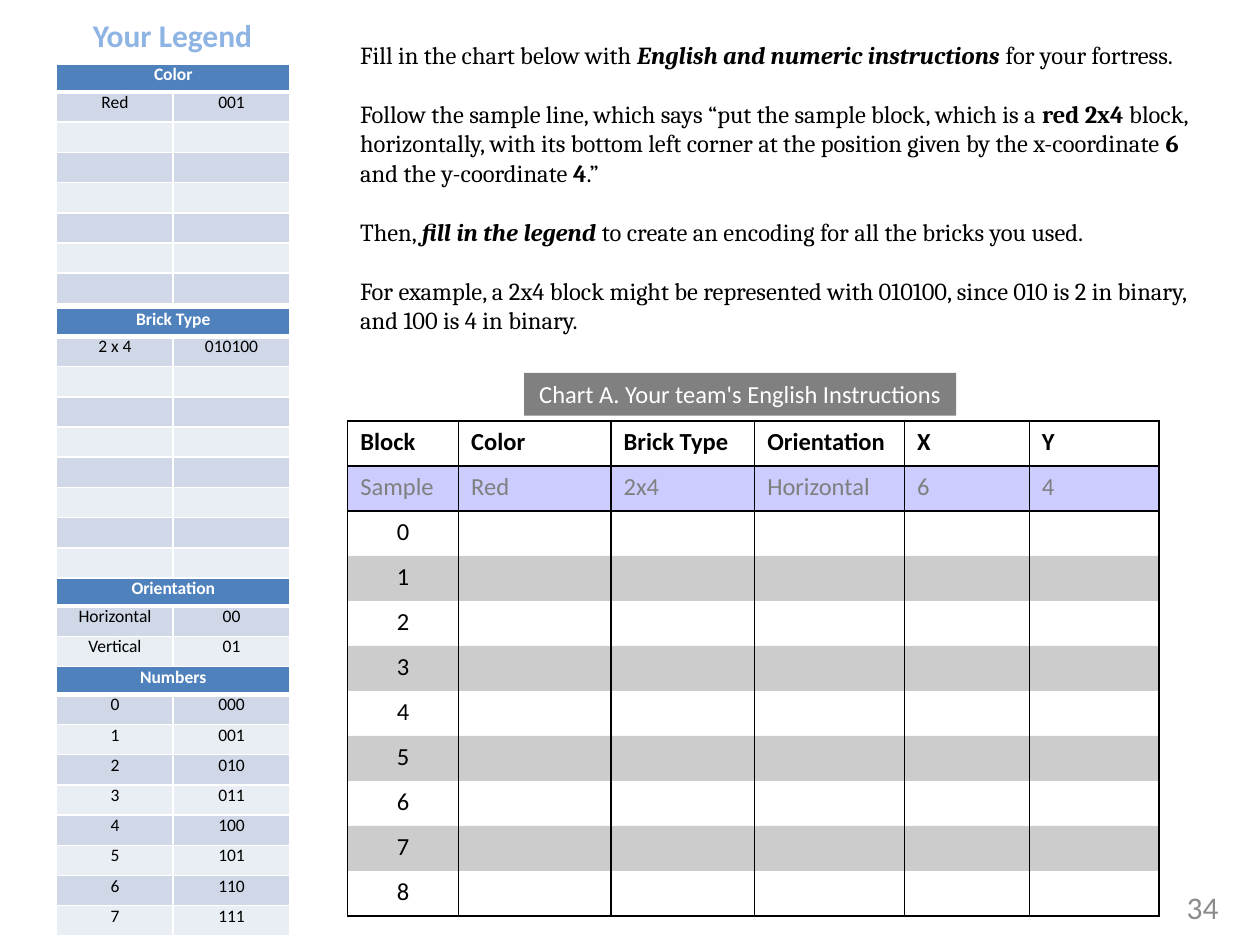
"""Build the legend and instruction chart worksheet slide."""
from lxml import etree
from pptx import Presentation
from pptx.dml.color import RGBColor
from pptx.enum.shapes import MSO_SHAPE
from pptx.enum.text import MSO_ANCHOR, PP_ALIGN
from pptx.oxml.ns import qn
from pptx.util import Inches, Pt

LEFT, CENTER, RIGHT = PP_ALIGN.LEFT, PP_ALIGN.CENTER, PP_ALIGN.RIGHT
TOP, MIDDLE = MSO_ANCHOR.TOP, MSO_ANCHOR.MIDDLE
RECTANGLE = MSO_SHAPE.RECTANGLE
NO_GRID_STYLE = "{2D5ABB26-0587-4C30-8999-92F81FD0307C}"

COLORS = {
    "black": "000000", "white": "FFFFFF", "blue": "0000FF", "muted": "7F7F7F",
    "label": "808080", "number": "8C8C8C", "title": "8EB4E3",
    "head": "4F81BD", "odd": "D0D8E8", "even": "E9EDF4",
}
BLANK_ROW = ("", "")
LEGEND = [
    ("Color", [("Red", "001")] + [BLANK_ROW] * 6, 0.04),
    ("Brick Type", [("2 x 4", "010100")] + [BLANK_ROW] * 7, 0),
    ("Orientation", [("Horizontal", "00"), ("Vertical", "01")], 0),
    ("Numbers", [(str(n), f"{n:03b}") for n in range(8)], 0),
]
LEGEND_LEFT, LEGEND_TOP, LEGEND_WIDTH = 0.45, 0.51, 1.85
LEGEND_HEAD, LEGEND_ROW = 0.22, 0.24

CHART = [
    ("Block", "Color", "Brick Type", "Orientation", "X", "Y"),
    ("Sample", "Red", "2x4", "Horizontal", "6", "4"),
] + [(str(n), "", "", "", "", "") for n in range(9)]
CHART_LEFT, CHART_TOP, CHART_HEIGHT = 2.76, 3.34, 3.93
CHART_COLUMNS = [0.88, 1.21, 1.14, 1.19, 0.99, 1.03]

INSTRUCTIONS = [
    [("Fill in the chart below with ", ""),
     ("English and numeric instructions ", "bi"), ("for your fortress.", "")],
    [("Follow the sample line, which says “put the sample block, which is a ", ""),
     ("red 2x4", "b"),
     (" block, horizontally, with its bottom left corner at the position given"
      " by the x-coordinate ", ""),
     ("6", "b"), (" and the y-coordinate ", ""), ("4", "b"), (".”", "")],
    [("Then, ", ""), ("fill in the legend ", "bi"),
     ("to create an encoding for all the bricks you used.", "")],
    [("For example, a 2x4 block might be represented with 010100, since 010 is 2"
      " in binary, and 100 is 4 in binary.", "")],
]


def rgb(name):
    return RGBColor.from_string(COLORS[name])


def set_font(paragraph, size, color, bold=None, align=LEFT, face="Calibri"):
    paragraph.alignment = align
    font = paragraph.font
    font.name, font.size, font.bold = face, Pt(size), bold
    font.color.rgb = rgb(color)


def write_frame(shape, text, size, color, bold=None, align=CENTER, anchor=TOP, wrap=False):
    frame = shape.text_frame
    frame.word_wrap, frame.vertical_anchor = wrap, anchor
    frame.text = text
    set_font(frame.paragraphs[0], size, color, bold, align)


def write_cell(cell, text, size, color, bold, align):
    cell.text = text
    paragraph = cell.text_frame.paragraphs[0]
    set_font(paragraph, size, color, bold, align)
    if not text:
        etree.SubElement(paragraph._p, qn("a:endParaRPr"), sz=str(size * 100))


def fill_cell(cell, color, opacity=100):
    cell.fill.solid()
    cell.fill.fore_color.rgb = rgb(color)
    if opacity < 100:
        tint = cell._tc.tcPr.find(".//" + qn("a:srgbClr"))
        etree.SubElement(tint, qn("a:alpha"), val=str(opacity * 1000))


def border_cell(cell, color, widths):
    """Draw the sides given in L, R, T, B order with their widths in points."""
    properties = cell._tc.get_or_add_tcPr()
    for index, (side, width) in enumerate(widths.items()):
        line = etree.Element(qn("a:ln" + side), w=str(Pt(width)))
        paint = etree.SubElement(line, qn("a:solidFill"))
        etree.SubElement(paint, qn("a:srgbClr"), val=COLORS[color])
        properties.insert(index, line)


def add_grid(page, left, top, columns, rows):
    table = page.shapes.add_table(
        len(rows), len(columns), Inches(left), Inches(top),
        Inches(sum(columns)), Inches(sum(rows))).table
    table.first_row = table.horz_banding = False
    table._tbl.tblPr.find(qn("a:tableStyleId")).text = NO_GRID_STYLE
    for column, width in zip(table.columns, columns):
        column.width = Inches(width)
    for row, height in zip(table.rows, rows):
        row.height = Inches(height)
    return table


def add_legend(page, title, entries, top):
    heights = [LEGEND_HEAD] + [LEGEND_ROW] * len(entries)
    table = add_grid(page, LEGEND_LEFT, top, [LEGEND_WIDTH / 2] * 2, heights)
    for r, texts in enumerate([(title, "")] + entries):
        head = r == 0
        for c, text in enumerate(texts):
            cell = table.cell(r, c)
            cell.margin_left = cell.margin_right = cell.margin_top = cell.margin_bottom = 0
            write_cell(cell, text, 10, "white" if head else "black", head, CENTER)
            fill_cell(cell, "head" if head else "odd" if r % 2 else "even")
            border_cell(cell, "white", {"L": 1, "R": 1, "T": 3 if r == 1 else 1,
                                        "B": 3 if head else 1})
    table.cell(0, 0).merge(table.cell(0, 1))
    return top + sum(heights)


def add_chart_grid(page):
    count = len(CHART)
    table = add_grid(page, CHART_LEFT, CHART_TOP, CHART_COLUMNS, [CHART_HEIGHT / count] * count)
    for r, texts in enumerate(CHART):
        sides = {"L": 1, "R": 1}
        if r < 2:
            sides["T"] = 1
        if r in (0, count - 1):
            sides["B"] = 1
        for c, text in enumerate(texts):
            cell = table.cell(r, c)
            write_cell(cell, text, 14, "muted" if r == 1 else "black", r == 0,
                       CENTER if r > 1 else LEFT)
            if r % 2:
                fill_cell(cell, "blue" if r == 1 else "black", 20)
            border_cell(cell, "black", sides)


def add_box(page, *place):
    return page.shapes.add_textbox(*map(Inches, place))


def add_instructions(page):
    frame = add_box(page, CHART_LEFT, 0.27, 6.91, 2.46).text_frame
    frame.word_wrap = True
    for index, spans in enumerate(INSTRUCTIONS):
        paragraph = frame.add_paragraph() if index else frame.paragraphs[0]
        set_font(paragraph, 14, "black", face="Cambria")
        paragraph.space_before = Pt(16.8 if index else 0)
        for text, style in spans:
            span = paragraph.add_run()
            span.text = text
            span.font.bold, span.font.italic = "b" in style, "i" in style


def main():
    deck = Presentation()
    deck.slide_width, deck.slide_height = Inches(10), Inches(7.5)
    page = deck.slides.add_slide(deck.slide_layouts[6])
    write_frame(add_box(page, 7.44, 7, 2.33, 0.4), "34", 18, "number",
                align=RIGHT, anchor=MIDDLE, wrap=True)
    add_chart_grid(page)
    write_frame(add_box(page, 0.62, 0.08, 1.5, 0.4), "Your Legend", 18, "title", True)
    top = LEGEND_TOP
    for title, entries, gap in LEGEND:
        top = add_legend(page, title, entries, top) + gap
    add_instructions(page)
    label = page.shapes.add_shape(RECTANGLE, *map(Inches, (4.16, 2.96, 3.43, 0.34)))
    label.shadow.inherit = False
    label.fill.solid()
    label.fill.fore_color.rgb = rgb("label")
    label.line.fill.background()
    write_frame(label, "Chart A. Your team's English Instructions", 14, "white")
    deck.save("out.pptx")


if __name__ == "__main__":
    main()
